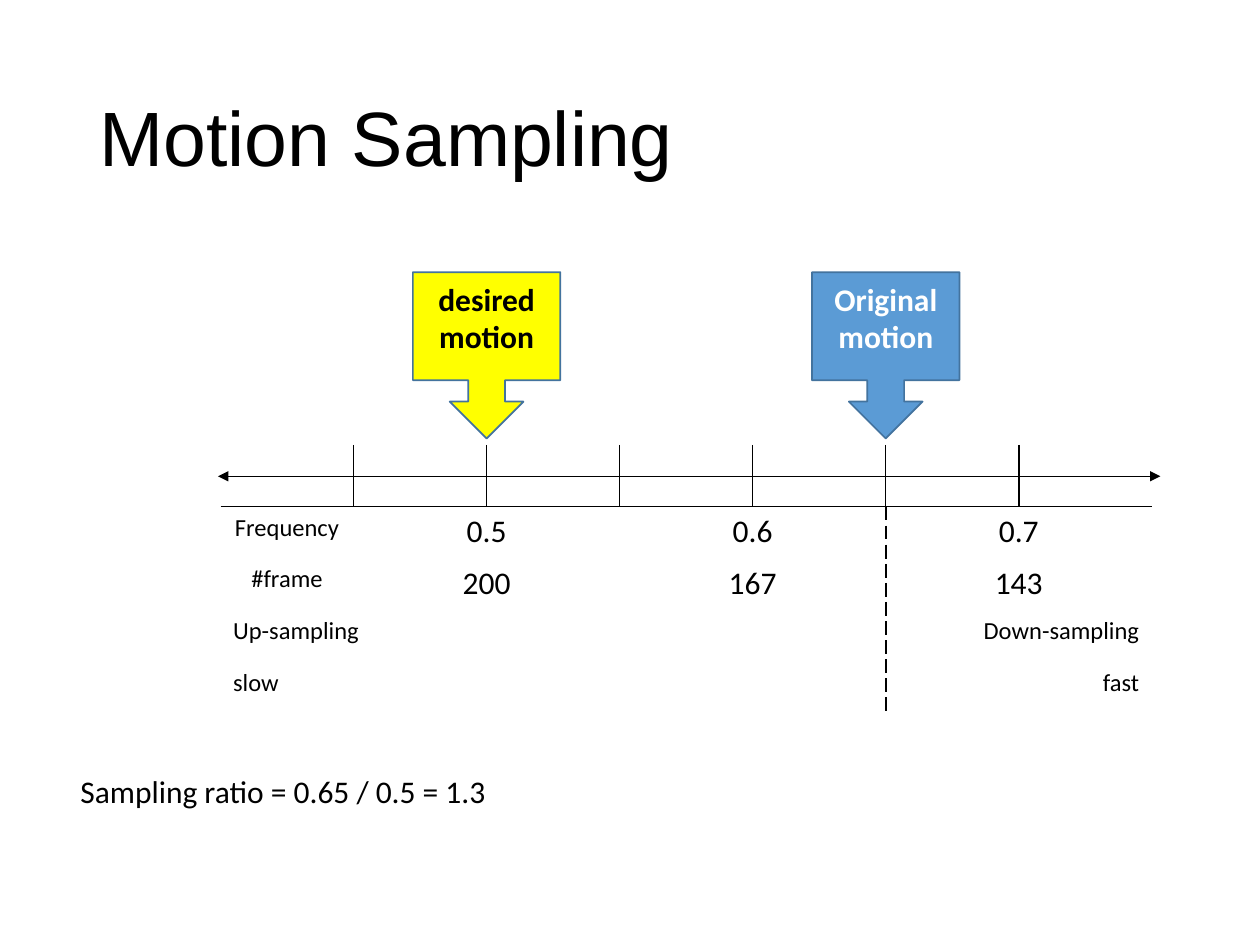
from dataclasses import dataclass

from lxml import etree
from pptx import Presentation
from pptx.dml.color import RGBColor
from pptx.enum.dml import MSO_LINE
from pptx.enum.shapes import MSO_CONNECTOR, MSO_SHAPE
from pptx.enum.text import MSO_ANCHOR, PP_ALIGN
from pptx.oxml.ns import qn
from pptx.util import Inches, Pt

LEFT, CENTER, RIGHT = PP_ALIGN.LEFT, PP_ALIGN.CENTER, PP_ALIGN.RIGHT
JUSTIFY = PP_ALIGN.JUSTIFY
MIDDLE = MSO_ANCHOR.MIDDLE
STRAIGHT = MSO_CONNECTOR.STRAIGHT
CALLOUT = MSO_SHAPE.DOWN_ARROW_CALLOUT
LONG_DASH = MSO_LINE.LONG_DASH

BLACK = RGBColor(0x00, 0x00, 0x00)
WHITE = RGBColor(0xFF, 0xFF, 0xFF)
BLUE = RGBColor(0x5B, 0x9B, 0xD5)
DARK_BLUE = RGBColor(0x43, 0x73, 0x9E)
YELLOW = RGBColor(0xFF, 0xFF, 0x00)

NO_STYLE = "{2D5ABB26-0587-4C30-8999-92F81FD0307C}"
GRID_X, GRID_Y = 1.75, 3.53
COLS, COL_W = 7, 1.056
ROW_H = [0.25, 0.24] + [0.41] * 4
TICK_ROWS = 2
AXIS_Y = GRID_Y + ROW_H[0]
TICK_END = GRID_Y + sum(ROW_H[:TICK_ROWS])
GRID_END = GRID_Y + sum(ROW_H)


@dataclass(frozen=True)
class Label:
    row: int
    col: int
    span: int
    text: str
    size: int = 14
    align: PP_ALIGN = CENTER


@dataclass(frozen=True)
class Marker:
    tick: int
    text: str
    fill: RGBColor
    color: RGBColor


LABELS = [
    Label(2, 0, 1, "Frequency"),
    Label(3, 0, 1, "#frame"),
    Label(4, 0, 3, "Up-sampling", align=JUSTIFY),
    Label(4, 3, 2, ""),
    Label(4, 5, 2, "Down-sampling", align=RIGHT),
    Label(5, 0, 1, "slow", align=LEFT),
    Label(5, 1, 2, ""),
    Label(5, 3, 2, ""),
    Label(5, 5, 2, "fast", align=RIGHT),
] + [
    Label(row, col, 2, text, 18)
    for row, texts in ((2, ("0.5", "0.6", "0.7")), (3, ("200", "167", "143")))
    for col, text in zip((1, 3, 5), texts)
]
MARKERS = [
    Marker(5, "Original motion", BLUE, WHITE),
    Marker(2, "desired motion", YELLOW, BLACK),
]


def tick_x(tick: float) -> float:
    """Return the horizontal position of a column boundary."""
    return GRID_X + tick * COL_W


def write(tf, text: str, size: int, align=LEFT, color=BLACK, bold=False, name="Calibri"):
    """Fill a text frame with one formatted paragraph."""
    tf.word_wrap = True
    p = tf.paragraphs[0]
    p.text, p.alignment = text, align
    p.font.size, p.font.name, p.font.bold = Pt(size), name, bold
    p.font.color.rgb = color
    return p


def add_border(cell, side: str) -> None:
    """Add a black one-point border on one side of a cell."""
    ln = etree.SubElement(cell._tc.get_or_add_tcPr(), qn(f"a:ln{side}"), w=str(Pt(1)))
    fill = etree.SubElement(ln, qn("a:solidFill"))
    etree.SubElement(fill, qn("a:srgbClr"), val=str(BLACK))


def add_scale(s) -> None:
    """Add the table whose upper borders form the axis and its ticks."""
    frame = s.shapes.add_table(len(ROW_H), COLS, Inches(GRID_X), Inches(GRID_Y),
                               Inches(COLS * COL_W), Inches(sum(ROW_H)))
    table = frame.table
    table.first_row = table.horz_banding = False
    table._tbl.tblPr.find(qn("a:tableStyleId")).text = NO_STYLE
    for column in table.columns:
        column.width = Inches(COL_W)
    for i, height in enumerate(ROW_H):
        table.rows[i].height = Inches(height)
        for j in range(COLS):
            cell = table.cell(i, j)
            if i < TICK_ROWS:
                sides = "L" * (j > 0) + "R" * (j < COLS - 1) + "BT"[i]
                for side in sides:
                    add_border(cell, side)
                cell.margin_top = cell.margin_bottom = 0
                p = cell.text_frame.paragraphs[0]._p
                etree.SubElement(p, qn("a:endParaRPr"), sz="800")
            cell.fill.background()
    for label in LABELS:
        cell = table.cell(label.row, label.col)
        if label.span > 1:
            cell.merge(table.cell(label.row, label.col + label.span - 1))
        if label.text:
            write(cell.text_frame, label.text, label.size, label.align)


def add_line(s, x1: float, y1: float, x2: float, y2: float, width: float):
    """Add a plain black connector."""
    line = s.shapes.add_connector(STRAIGHT, *map(Inches, (x1, y1, x2, y2)))
    line.line.color.rgb, line.line.width = BLACK, Pt(width)
    etree.SubElement(line._element.spPr, qn("a:effectLst"))
    return line


def add_axis_end(s, x1: float, x2: float) -> None:
    """Extend the axis with an arrowhead."""
    line = add_line(s, x1, AXIS_Y, x2, AXIS_Y, 0.5)
    etree.SubElement(line.line._get_or_add_ln(), qn("a:tailEnd"), type="triangle")


def add_marker(s, marker: Marker) -> None:
    """Add a grouped callout pointing at a tick."""
    group = s.shapes.add_group_shape()
    x, width, text_width = tick_x(marker.tick), 1.17, 1.02
    sp = group.shapes.add_shape(CALLOUT, Inches(x - width / 2), Inches(2.16),
                                Inches(width), Inches(1.32))
    sp.shadow.inherit = False
    sp.fill.solid()
    sp.fill.fore_color.rgb = marker.fill
    sp.line.color.rgb, sp.line.width = DARK_BLUE, Pt(1)
    box = group.shapes.add_textbox(Inches(x - text_width / 2), Inches(2.17),
                                   Inches(text_width), Inches(0.71))
    write(box.text_frame, marker.text, 18, CENTER, marker.color, True)


def main() -> None:
    """Build and save the slide."""
    prs = Presentation()
    prs.slide_width, prs.slide_height = Inches(10), Inches(7.5)
    s = prs.slides.add_slide(prs.slide_layouts[5])
    title = s.shapes.title
    title.left, title.top, title.width, title.height = map(Inches, (0.69, 0.4, 8.62, 1.45))
    title.text_frame.vertical_anchor = MIDDLE
    write(title.text_frame, "Motion Sampling", 44, name="Arial").line_spacing = 0.9
    add_scale(s)
    add_axis_end(s, 8.92, 9.21)
    add_axis_end(s, 1.98, 1.73)
    divider = add_line(s, tick_x(5), TICK_END, tick_x(5), GRID_END, 1)
    divider.line.dash_style = LONG_DASH
    for marker in MARKERS:
        add_marker(s, marker)
    box = s.shapes.add_textbox(Inches(0.54), Inches(6.08), Inches(4.3), Inches(0.4))
    write(box.text_frame, "Sampling ratio = 0.65 / 0.5 = 1.3", 18)
    prs.save("out.pptx")


if __name__ == "__main__":
    main()
